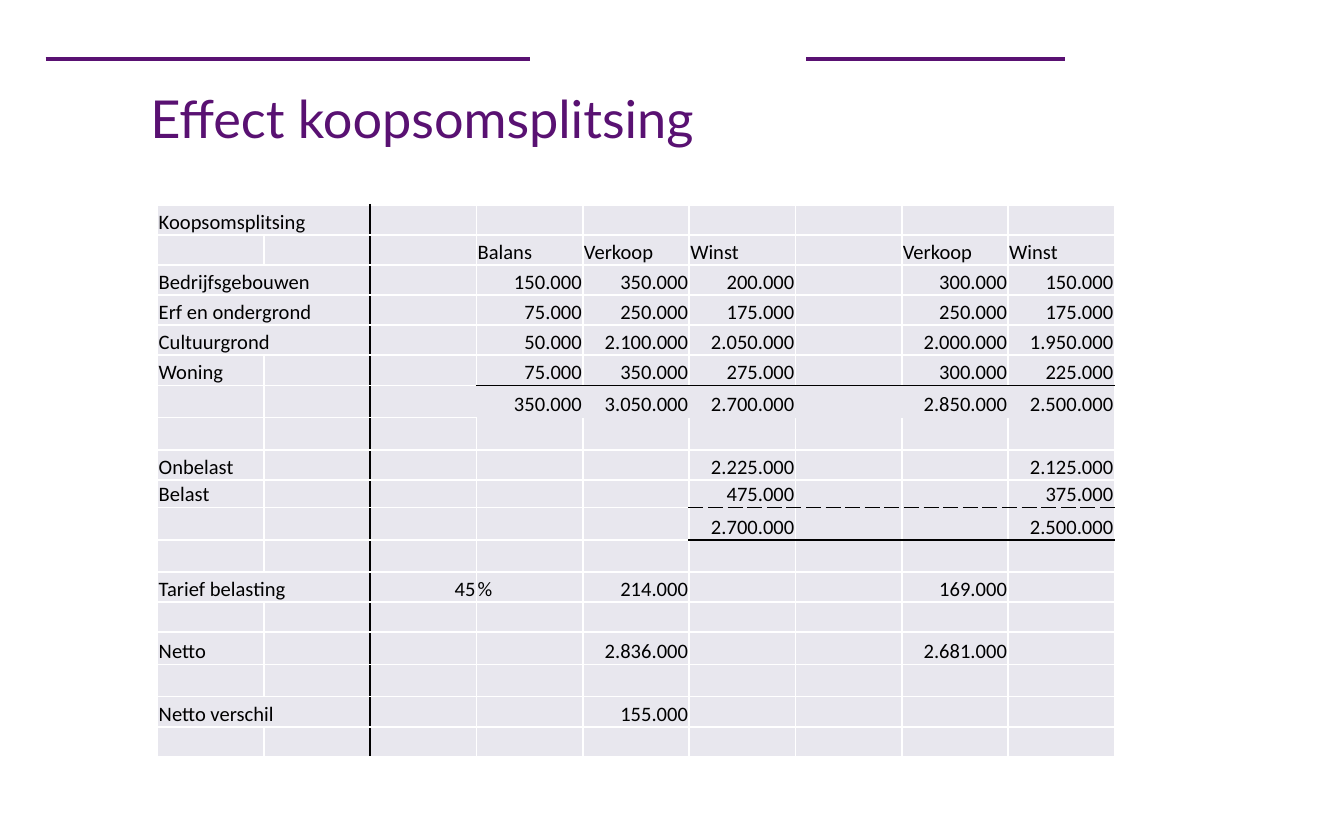
from dataclasses import dataclass

import lxml.etree
import pptx
import pptx.dml.color
import pptx.enum.shapes
import pptx.enum.text
import pptx.oxml.ns
import pptx.util

Cm = pptx.util.Cm
Pt = pptx.util.Pt
qn = pptx.oxml.ns.qn


@dataclass(frozen=True)
class Theme:
    accent: str = "591172"
    cell: str = "E8E7EE"
    grid: str = "FFFFFF"
    ink: str = "000000"
    title_font: str = "Lato"
    table_font: str = "Calibri"
    title_size: int = 28
    table_size: int = 11
    accent_width: int = 2
    grid_width: int = 1


THEME = Theme()

LOW, NORMAL, HIGH = 0.52, 0.57, 0.61
COLUMN_WIDTH = 2.01
EMPTY = ("",) * 7

# Row height in cm, label, label spans two columns, values of columns 2 to 8
ROWS = [
    (NORMAL, "Koopsomsplitsing", True, EMPTY),
    (NORMAL, "", False, ("", "Balans", "Verkoop", "Winst", "", "Verkoop", "Winst")),
    (NORMAL, "Bedrijfsgebouwen", True,
     ("", "150.000", "350.000", "200.000", "", "300.000", "150.000")),
    (NORMAL, "Erf en ondergrond", True,
     ("", "75.000", "250.000", "175.000", "", "250.000", "175.000")),
    (NORMAL, "Cultuurgrond", True,
     ("", "50.000", "2.100.000", "2.050.000", "", "2.000.000", "1.950.000")),
    (NORMAL, "Woning", False,
     ("", "75.000", "350.000", "275.000", "", "300.000", "225.000")),
    (HIGH, "", False,
     ("", "350.000", "3.050.000", "2.700.000", "", "2.850.000", "2.500.000")),
    (HIGH, "", False, EMPTY),
    (NORMAL, "Onbelast", False, ("", "", "", "2.225.000", "", "", "2.125.000")),
    (LOW, "Belast", False, ("", "", "", "475.000", "", "", "375.000")),
    (HIGH, "", False, ("", "", "", "2.700.000", "", "", "2.500.000")),
    (HIGH, "", False, EMPTY),
    (NORMAL, "Tarief belasting", True, ("45", "%", "214.000", "", "", "169.000", "")),
    (NORMAL, "", False, EMPTY),
    (HIGH, "Netto", False, ("", "", "2.836.000", "", "", "2.681.000", "")),
    (HIGH, "", False, EMPTY),
    (NORMAL, "Netto verschil", True, ("", "", "155.000", "", "", "", "")),
    (NORMAL, "", False, EMPTY),
]
TOTAL_ROW, TAX_TOTAL_ROW = 6, 10
FIRST_AMOUNT, FIRST_PROFIT = 3, 5


def rgb(value):
    return pptx.dml.color.RGBColor.from_string(value)


def horizontal_edge(row, column):
    """Colour and dash of the line above a row; no colour means no line."""
    if column >= FIRST_AMOUNT and row == TOTAL_ROW:
        return THEME.ink, None
    if column >= FIRST_AMOUNT and row == TOTAL_ROW + 1:
        return None, None
    if column >= FIRST_PROFIT and row == TAX_TOTAL_ROW:
        return THEME.ink, "sysDash"
    if column >= FIRST_PROFIT and row == TAX_TOTAL_ROW + 1:
        return THEME.ink, None
    return THEME.grid, None


def vertical_edge(row, column):
    """Colour and dash of the line left of a column."""
    if column == 2:
        return THEME.ink, None
    if row == TOTAL_ROW and column >= FIRST_AMOUNT:
        return None, None
    return THEME.grid, None


def set_borders(cell, row, column):
    edges = {
        "a:lnL": vertical_edge(row, column),
        "a:lnR": vertical_edge(row, column + 1),
        "a:lnT": horizontal_edge(row, column),
        "a:lnB": horizontal_edge(row + 1, column),
    }
    properties = cell._tc.get_or_add_tcPr()
    for tag, (color, dash) in edges.items():
        line = lxml.etree.SubElement(properties, qn(tag), w=str(Pt(THEME.grid_width)))
        if color is None:
            lxml.etree.SubElement(line, qn("a:noFill"))
            continue
        fill = lxml.etree.SubElement(line, qn("a:solidFill"))
        lxml.etree.SubElement(fill, qn("a:srgbClr"), val=color)
        lxml.etree.SubElement(line, qn("a:prstDash"), val=dash or "solid")


def fill_cell(cell, text):
    cell.fill.solid()
    cell.fill.fore_color.rgb = rgb(THEME.cell)
    cell.vertical_anchor = pptx.enum.text.MSO_ANCHOR.BOTTOM
    cell.margin_left = cell.margin_right = cell.margin_top = Cm(0.02)
    cell.margin_bottom = 0
    paragraph = cell.text_frame.paragraphs[0]
    if text:
        paragraph.text = text
    else:
        # An empty cell takes its line height from the end mark
        paragraph._p.get_or_add_endParaRPr().set("sz", str(THEME.table_size * 100))
    if text[:1].isdigit():
        paragraph.alignment = pptx.enum.text.PP_ALIGN.RIGHT
    paragraph.font.name = THEME.table_font
    paragraph.font.size = Pt(THEME.table_size)
    paragraph.font.color.rgb = rgb(THEME.ink)


def add_split_table(slide, left, top):
    column_count = 2 + len(EMPTY)
    height = sum(row[0] for row in ROWS)
    table = slide.shapes.add_table(
        len(ROWS), column_count, Cm(left), Cm(top),
        Cm(column_count * COLUMN_WIDTH), Cm(height)).table
    table.first_row = table.horz_banding = False
    for column in table.columns:
        column.width = Cm(COLUMN_WIDTH)
    for row, (row_height, label, spans, values) in enumerate(ROWS):
        table.rows[row].height = Cm(row_height)
        for column, text in enumerate((label, "", *values)):
            cell = table.cell(row, column)
            set_borders(cell, row, column)
            fill_cell(cell, text)
        if spans:
            table.cell(row, 0).merge(table.cell(row, 1))


def add_accent_line(slide, left, top, width):
    line = slide.shapes.add_connector(
        pptx.enum.shapes.MSO_CONNECTOR.STRAIGHT,
        Cm(left), Cm(top), Cm(left + width), Cm(top))
    line.line.color.rgb = rgb(THEME.accent)
    line.line.width = Pt(THEME.accent_width)
    lxml.etree.SubElement(line._element.spPr, qn("a:effectLst"))


def set_title(slide, text, left, top, width, height):
    title = slide.shapes.title
    title.left, title.top = Cm(left), Cm(top)
    title.width, title.height = Cm(width), Cm(height)
    frame = title.text_frame
    frame.text = text
    frame.word_wrap = True
    frame.auto_size = pptx.enum.text.MSO_AUTO_SIZE.NONE
    frame.vertical_anchor = pptx.enum.text.MSO_ANCHOR.TOP
    paragraph = frame.paragraphs[0]
    paragraph.alignment = pptx.enum.text.PP_ALIGN.LEFT
    paragraph.font.name = THEME.title_font
    paragraph.font.size = Pt(THEME.title_size)
    paragraph.font.color.rgb = rgb(THEME.accent)


def main():
    presentation = pptx.Presentation()
    presentation.slide_width = Cm(25.4)
    presentation.slide_height = Cm(15.88)
    slide = presentation.slides.add_slide(presentation.slide_layouts[5])
    add_accent_line(slide, 0.86, 1.11, 9.15)
    add_accent_line(slide, 15.24, 1.11, 4.88)
    set_title(slide, "Effect koopsomsplitsing", 2.59, 1.5, 19.84, 2.69)
    add_split_table(slide, 2.98, 3.87)
    presentation.save("out.pptx")


if __name__ == "__main__":
    main()
